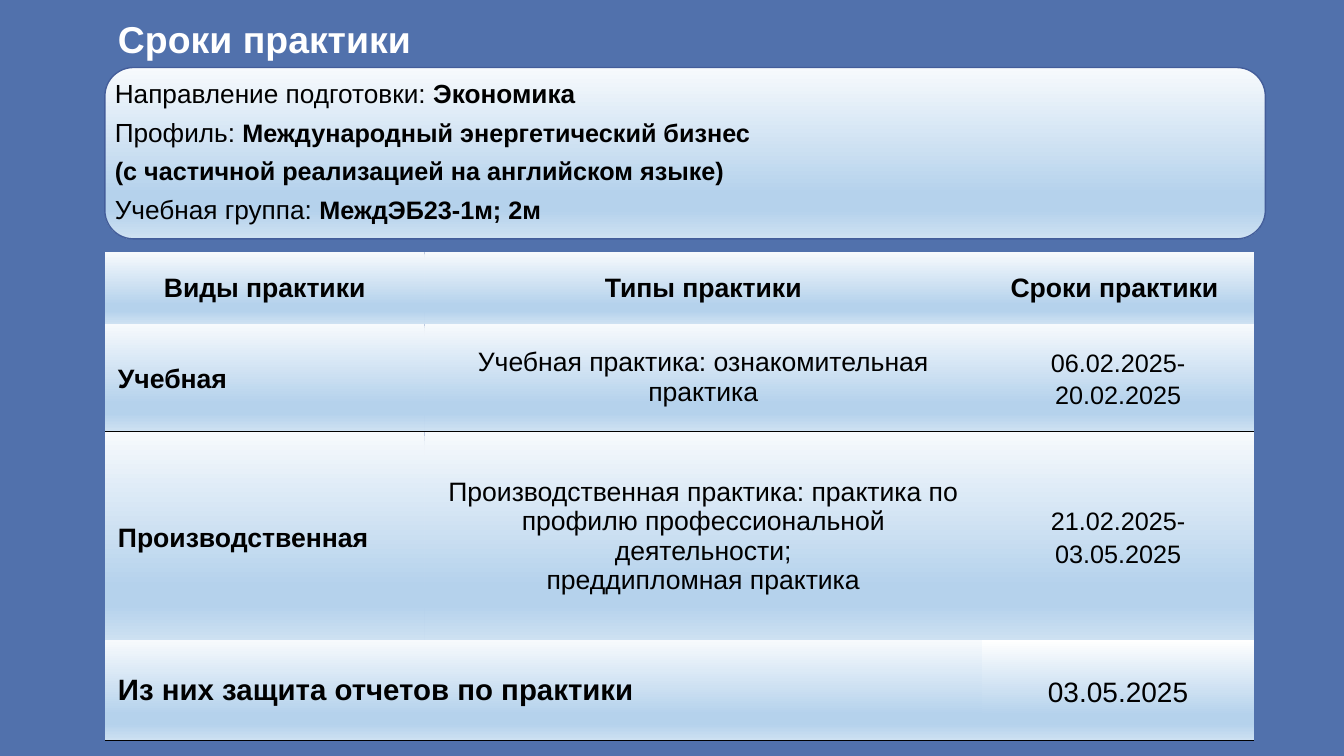
import lxml.etree
import pptx
import pptx.dml.color
import pptx.enum.shapes
import pptx.enum.text
import pptx.oxml.ns
import pptx.util

Inches = pptx.util.Inches
Pt = pptx.util.Pt
qn = pptx.oxml.ns.qn
ALIGN = pptx.enum.text.PP_ALIGN
MIDDLE = pptx.enum.text.MSO_ANCHOR.MIDDLE
NO_STYLE = "{2D5ABB26-0587-4C30-8999-92F81FD0307C}"
LEFT, TABLE_WIDTH = 1.04, 11.4


def color(value):
    return pptx.dml.color.RGBColor.from_string(value)


def fill_gradient(fill, properties, top="F7FAFD"):
    """Fill from top to bottom; properties is the element that holds the fill."""
    fill.gradient()
    fill.gradient_angle = 270
    stops = properties.find(qn("a:gradFill")).find(qn("a:gsLst"))
    stops.clear()
    for percent, value in ((0, top), (74, "B5D2EC"), (83, "B5D2EC"), (100, "CEE1F2")):
        stop = lxml.etree.SubElement(stops, qn("a:gs"), pos=str(percent * 1000))
        lxml.etree.SubElement(stop, qn("a:srgbClr"), val=value)


presentation = pptx.Presentation()
presentation.slide_width = Inches(13.33)
presentation.slide_height = Inches(7.5)
slide = presentation.slides.add_slide(presentation.slide_layouts[6])
slide.background.fill.solid()
slide.background.fill.fore_color.rgb = color("5171AC")

# Panel
panel = slide.shapes.add_shape(
    pptx.enum.shapes.MSO_SHAPE.ROUNDED_RECTANGLE,
    Inches(LEFT), Inches(0.67), Inches(11.51), Inches(1.7))
panel.shadow.inherit = False
fill_gradient(panel.fill, panel._element.spPr)
panel.line.color.rgb = color("435D9A")
panel.line.width = Pt(1)

# Title
title = slide.shapes.add_textbox(Inches(LEFT), Inches(-0.12), Inches(11.23), Inches(0.89))
frame = title.text_frame
frame.word_wrap = True
frame.vertical_anchor = MIDDLE
frame.margin_left = frame.margin_right = frame.margin_top = frame.margin_bottom = Inches(0.13)
paragraph = frame.paragraphs[0]
paragraph.text = "Сроки практики"
paragraph.line_spacing = 1.25
paragraph.font.name = "Arial"
paragraph.font.size = Pt(26.7)
paragraph.font.bold = True
paragraph.font.color.rgb = color("FFFFFF")

# Programme details: label and bold value
details = [
    ("Направление подготовки: ", "Экономика", 18.7),
    ("Профиль: ", "Международный энергетический бизнес", 18),
    ("", "(с частичной реализацией на английском языке)", 18),
    ("Учебная группа: ", "МеждЭБ23-1м; 2м", 18),
]
details_box = slide.shapes.add_textbox(Inches(LEFT), Inches(0.64), Inches(11.5), Inches(1.66))
frame = details_box.text_frame
frame.word_wrap = True
for index, (label, value, value_size) in enumerate(details):
    paragraph = frame.add_paragraph() if index else frame.paragraphs[0]
    paragraph.line_spacing = 1.25
    paragraph.font.name = "Arial"
    paragraph.font.color.rgb = color("000000")
    for text, size, bold in ((label, 18.7, False), (value, value_size, True)):
        if text:
            run = paragraph.add_run()
            run.text = text
            run.font.name = "Arial"
            run.font.color.rgb = color("000000")
            run.font.size = Pt(size)
            run.font.bold = bold

# Tables: each cell is text, size, bold, centred, line spacing, side margin, top margin
schedule = [
    [("Виды практики", 19, True, True, 1, 0.13, 0.13),
     ("Типы практики", 19, True, True, 1, 0.13, 0.13),
     ("Сроки практики ", 19, True, True, 1, 0.13, 0.13)],
    [("Учебная", 19, True, False, 1.14, 0.13, 0.13),
     ("Учебная практика: ознакомительная практика", 19, False, True, 1, 0.1, 0),
     ("06.02.2025-20.02.2025", 18, False, True, 1.14, 0.13, 0.13)],
    [("Производственная", 19, True, False, 1.14, 0.13, 0.13),
     ("Производственная практика: практика по профилю профессиональной деятельности;\n"
      "преддипломная практика", 19, False, True, 1, 0.1, 0),
     ("21.02.2025-03.05.2025", 18, False, True, 1.14, 0.13, 0.13)],
]
defence = [
    [("Из них защита отчетов по практики", 21, True, False, 1, 0.13, 0.13),
     ("03.05.2025", 20, False, True, 1.14, 0.1, 0)],
]
# Top, column widths, row heights, cells, bordered sides by row, top colour of the last column
tables = [
    (2.5, [3.17, 5.53, 2.7], [0.71, 1.07, 2.08], schedule, ["", "B", "TB"], "F7FAFD"),
    (6.35, [8.7, 2.7], [1], defence, ["B"], "FFFFFF"),
]
for top, widths, heights, rows, borders, last_top_color in tables:
    graphic_frame = slide.shapes.add_table(
        len(rows), len(widths), Inches(LEFT), Inches(top),
        Inches(TABLE_WIDTH), Inches(sum(heights)))
    table = graphic_frame.table
    table.first_row = table.horz_banding = False
    table._tbl.tblPr.find(qn("a:tableStyleId")).text = NO_STYLE
    for column, width in zip(table.columns, widths):
        column.width = Inches(width)
    for row_index, height in enumerate(heights):
        table.rows[row_index].height = Inches(height)
        for column_index, content in enumerate(rows[row_index]):
            text, size, bold, centred, spacing, side, edge = content
            cell = table.cell(row_index, column_index)
            cell.text = text
            cell.vertical_anchor = MIDDLE
            cell.margin_left = cell.margin_right = Inches(side)
            cell.margin_top = cell.margin_bottom = Inches(edge)
            for paragraph in cell.text_frame.paragraphs:
                paragraph.alignment = ALIGN.CENTER if centred else ALIGN.LEFT
                paragraph.line_spacing = spacing
                paragraph.font.name = "Arial"
                paragraph.font.size = Pt(size)
                paragraph.font.bold = bold
                paragraph.font.color.rgb = color("000000")
            properties = cell._tc.get_or_add_tcPr()
            is_last = column_index == len(widths) - 1
            fill_gradient(cell.fill, properties, last_top_color if is_last else "F7FAFD")
            for position, border_side in enumerate(borders[row_index]):
                border = lxml.etree.Element(qn("a:ln" + border_side), w=str(Pt(1)))
                border_fill = lxml.etree.SubElement(border, qn("a:solidFill"))
                lxml.etree.SubElement(border_fill, qn("a:srgbClr"), val="000000")
                properties.insert(position, border)

presentation.save("out.pptx")
